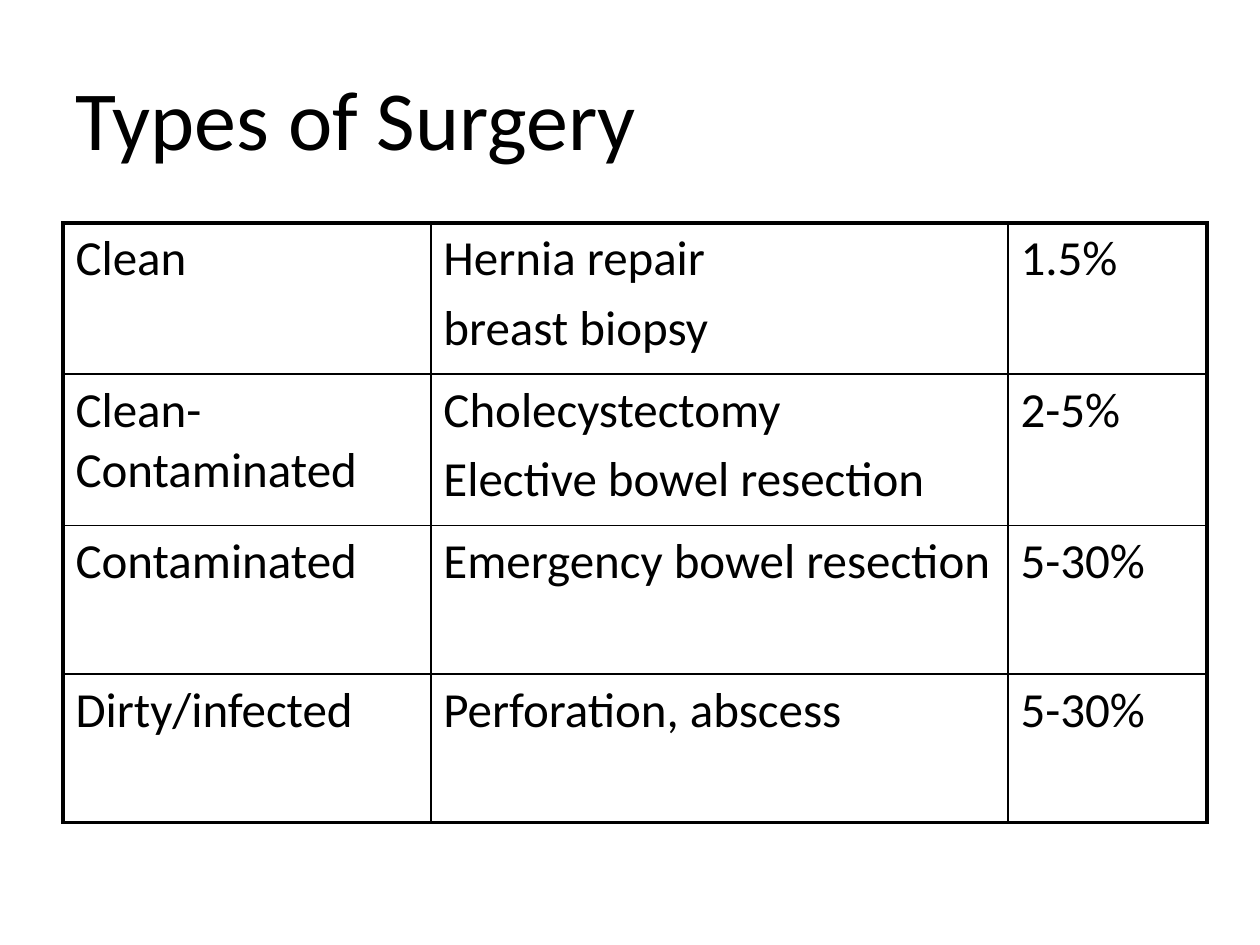
from dataclasses import dataclass

from lxml.etree import SubElement
from pptx import Presentation
from pptx.dml.color import RGBColor
from pptx.enum.text import MSO_ANCHOR
from pptx.oxml.ns import qn
from pptx.util import Inches, Pt


@dataclass(frozen=True)
class Theme:
    font: str = "Calibri"
    ink: str = "000000"
    paper: str = "FFFFFF"
    title: int = 48
    body: int = 28
    gap: float = 5.6
    thick: float = 2.25
    thin: float = 1


THEME = Theme()
WIDTHS = (2.92, 4.58, 1.58)
HEIGHTS = (1.2, 1.2, 1.18, 1.18)
ROWS = (
    ("Clean", "Hernia repair\nbreast biopsy", "1.5%"),
    ("Clean-Contaminated", "Cholecystectomy\nElective bowel resection", "2-5%"),
    ("Contaminated", "Emergency bowel resection", "5-30%"),
    ("Dirty/infected", "Perforation, abscess", "5-30%"),
)


def style(font, size):
    look = {"name": THEME.font, "size": Pt(size), "bold": False}
    for key, value in look.items():
        setattr(font, key, value)
    font.color.rgb = RGBColor.from_string(THEME.ink)


def write(frame, text, size):
    frame.text = text
    for i, para in enumerate(frame.paragraphs):
        para.space_before = Pt(THEME.gap if i else 0)
        for run in para.runs:
            style(run.font, size)


def add_title(slide, text):
    box = slide.shapes.add_textbox(Inches(0.5), Inches(0.3), Inches(9), Inches(1.25))
    frame = box.text_frame
    frame.word_wrap = True
    frame.vertical_anchor = MSO_ANCHOR.MIDDLE
    write(frame, text, THEME.title)


def add_edge(cell, side, width):
    props = cell._tc.get_or_add_tcPr()
    line = SubElement(props, qn(f"a:ln{side}"), w=str(Pt(width)))
    fill = SubElement(line, qn("a:solidFill"))
    SubElement(fill, qn("a:srgbClr"), val=THEME.ink)


def add_grid(slide, rows):
    count, span = len(rows), len(WIDTHS)
    table = slide.shapes.add_table(
        count, span, Inches(0.5), Inches(1.77),
        Inches(sum(WIDTHS)), Inches(sum(HEIGHTS)),
    ).table
    for flag in ("first_row", "horz_banding"):
        setattr(table, flag, False)
    for col, width in zip(table.columns, WIDTHS):
        col.width = Inches(width)
    for row, height in zip(table.rows, HEIGHTS):
        row.height = Inches(height)

    for r, row in enumerate(rows):
        for c, text in enumerate(row):
            cell = table.cell(r, c)
            write(cell.text_frame, text, THEME.body)
            # Thick frame outside, thin rules inside
            outer = {"L": c == 0, "R": c == span - 1, "T": r == 0, "B": r == count - 1}
            for side, edge in outer.items():
                add_edge(cell, side, THEME.thick if edge else THEME.thin)
            cell.fill.background()


def main():
    deck = Presentation()
    deck.slide_width, deck.slide_height = Inches(10), Inches(7.5)
    slide = deck.slides.add_slide(deck.slide_layouts[6])
    back = slide.background.fill
    back.solid()
    back.fore_color.rgb = RGBColor.from_string(THEME.paper)

    # Heading, then the table of wound classes
    add_title(slide, "Types of Surgery")
    add_grid(slide, ROWS)
    deck.save("out.pptx")


if __name__ == "__main__":
    main()
